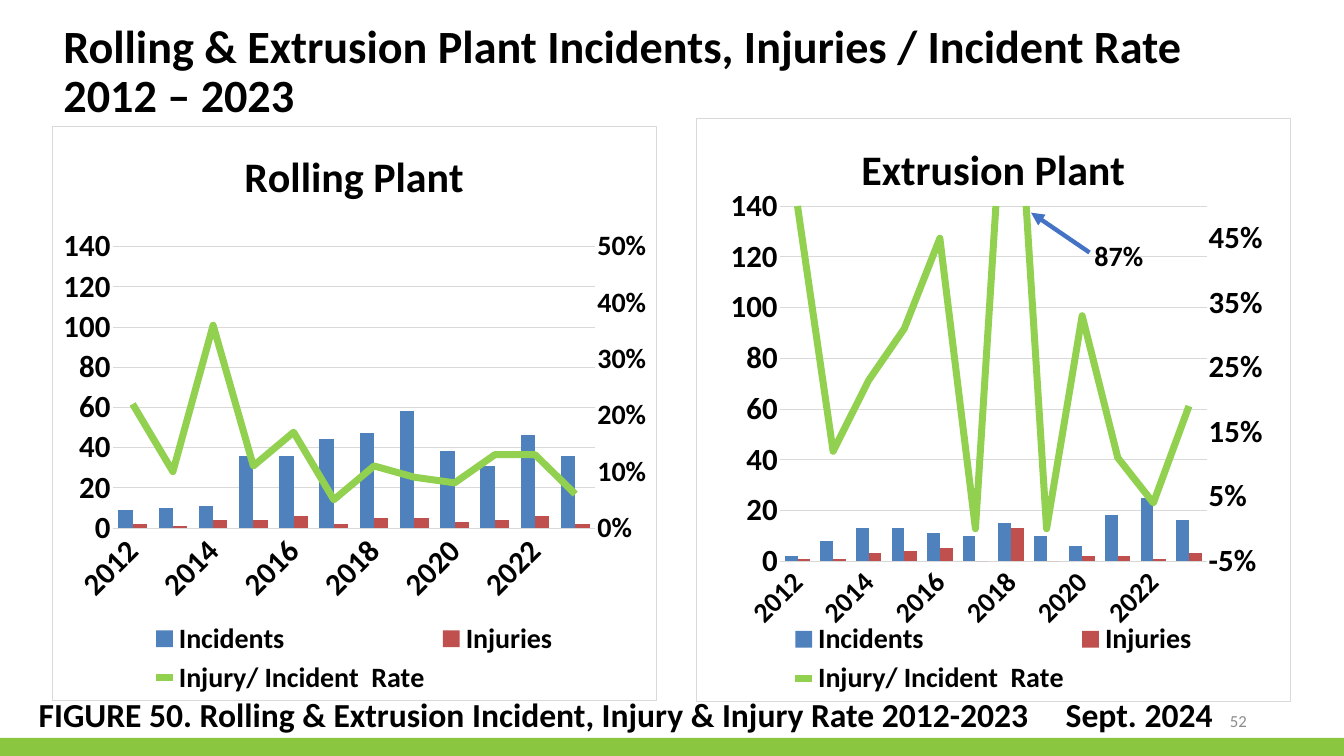
from copy import deepcopy
from lxml import etree
from pptx import Presentation
from pptx.chart.axis import ValueAxis
from pptx.chart.data import CategoryChartData
from pptx.dml.color import RGBColor
from pptx.enum import chart as ch, shapes, text
from pptx.oxml import parse_xml
from pptx.oxml.ns import nsdecls, qn
from pptx.util import Inches, Pt

BLACK = RGBColor(0, 0, 0)
GRAY = RGBColor(0x8C, 0x8C, 0x8C)
RULE = RGBColor(0xD9, 0xD9, 0xD9)
GREEN = RGBColor(0x8B, 0xC6, 0x41)
LIME = RGBColor(0x92, 0xD0, 0x50)
BLUE = RGBColor(0x4F, 0x81, 0xBD)
RED = RGBColor(0xC0, 0x50, 0x4D)
ARROW = RGBColor(0x44, 0x72, 0xC4)
FACE = "Calibri"
YEARS = [str(y) for y in range(2012, 2024)]
NAMES = ("Incidents", "Injuries", "Injury/ Incident  Rate")

ROLLING = (
    (9, 10, 11, 36, 36, 44, 47, 58, 38, 31, 46, 36),
    (2, 1, 4, 4, 6, 2, 5, 5, 3, 4, 6, 2),
    (.22, .1, .36, .11, .17, .05, .11, .09, .08, .13, .13, .06))
EXTRUSION = (
    (2, 8, 13, 13, 11, 10, 15, 10, 6, 18, 25, 16),
    (1, 1, 3, 4, 5, 0, 13, 0, 2, 2, 1, 3),
    (.5, .12, .23, .31, .45, 0, .87, 0, .33, .11, .04, .19))


def style(font, size, color=BLACK, bold=True):
    font.name, font.size, font.bold = FACE, Pt(size), bold
    font.color.rgb = color


def add_text(slide, box, lines, size, color=BLACK, bold=True, tab=None):
    frame = slide.shapes.add_textbox(*map(Inches, box)).text_frame
    frame.word_wrap = True
    frame.text = "\n".join(lines)
    for para in frame.paragraphs:
        if tab:
            tabs = etree.SubElement(para._p.get_or_add_pPr(), qn("a:tabLst"))
            etree.SubElement(tabs, qn("a:tab"), pos=str(Inches(tab)), algn="l")
        style(para.font, size, color, bold)
    return frame


def add_node(parent, tag, val):
    etree.SubElement(parent, qn(tag)).set("val", str(val))


def set_scale(axis, low, high, step):
    axis.minimum_scale, axis.maximum_scale, axis.major_unit = low, high, step


def add_rate(chart, low, step, size):
    """Move the third series to a line on a right-hand axis."""
    plot = chart._chartSpace.chart.plotArea
    bar, cat, val = (plot.find(qn(t)) for t in ("c:barChart", "c:catAx", "c:valAx"))
    ser = bar.findall(qn("c:ser"))[2]
    for node in ser.findall(qn("c:invertIfNegative")):
        ser.remove(node)
    line = etree.Element(qn("c:lineChart"))
    line = parse_xml(f'<c:lineChart {nsdecls("c")}/>')
    add_node(line, "c:grouping", "standard")
    add_node(line, "c:varyColors", 0)
    line.append(ser)
    add_node(line, "c:marker", 1)
    bar.addnext(line)

    right, hidden = deepcopy(val), deepcopy(cat)
    val.addnext(right)
    right.addnext(hidden)
    for axis, own, other in ((hidden, 5001, 5002), (right, 5002, 5001)):
        axis.find(qn("c:axId")).set("val", str(own))
        axis.find(qn("c:crossAx")).set("val", str(other))
        add_node(line, "c:axId", own)
    hidden.get_or_add_delete_().set("val", "1")
    right.find(qn("c:axPos")).set("val", "r")
    right.find(qn("c:crosses")).set("val", "max")

    axis = ValueAxis(right)
    axis.has_major_gridlines = False
    set_scale(axis, low, .5, step)
    axis.tick_labels.number_format = "0%"
    axis.tick_labels.number_format_is_linked = False
    style(axis.tick_labels.font, size)


def set_area(chart, area):
    """Fix the inner plot area and frame the whole chart."""
    parts = "".join(f'<c:{k} val="{v}"/>' for k, v in zip("xywh", area))
    plot = chart._chartSpace.chart.plotArea
    for old in plot.findall(qn("c:layout")):
        plot.remove(old)
    plot.insert(0, parse_xml(
        f'<c:layout {nsdecls("c")}><c:manualLayout><c:layoutTarget val="inner"/>'
        f'<c:xMode val="edge"/><c:yMode val="edge"/>{parts}'
        '</c:manualLayout></c:layout>'))
    chart._chartSpace.chart.addnext(parse_xml(
        f'<c:spPr {nsdecls("c", "a")}><a:solidFill><a:srgbClr val="FFFFFF"/></a:solidFill>'
        f'<a:ln w="{Pt(.75)}"><a:solidFill><a:srgbClr val="{RULE}"/></a:solidFill></a:ln></c:spPr>'))


def add_plant(slide, box, title, rows, area, low, step, sizes):
    data = CategoryChartData()
    data.categories = YEARS
    for name, row in zip(NAMES, rows):
        data.add_series(name, row, "0%" if name == NAMES[2] else "General")
    chart = slide.shapes.add_chart(
        ch.XL_CHART_TYPE.COLUMN_CLUSTERED, *map(Inches, box), data).chart
    years, right = sizes
    style(chart.font, 40)

    # Title and legend
    chart.has_title = True
    chart.chart_title.text_frame.text = title
    style(chart.chart_title.text_frame.paragraphs[0].font, 60)
    chart.chart_title.include_in_layout = False
    chart.has_legend = True
    chart.legend.position = ch.XL_LEGEND_POSITION.BOTTOM
    chart.legend.include_in_layout = False
    style(chart.legend.font, 40)

    # Axes
    cat, val = chart.category_axis, chart.value_axis
    for axis, size in ((cat, years), (val, 44)):
        axis.major_tick_mark = axis.minor_tick_mark = ch.XL_TICK_MARK.NONE
        style(axis.tick_labels.font, size)
    cat.tick_label_position = ch.XL_TICK_LABEL_POSITION.LOW
    cat._element.find(qn("c:txPr")).find(qn("a:bodyPr")).set("rot", "-2700000")
    val.has_major_gridlines = True
    for rule in (cat.format.line, val.major_gridlines.format.line):
        rule.color.rgb, rule.width = RULE, Pt(.75)
    val.format.line.fill.background()
    set_scale(val, 0, 140, 20)

    # Series
    plot = chart.plots[0]
    plot.gap_width, plot.overlap, plot.vary_by_categories = 80, 0, False
    for ser, color in zip(plot.series, (BLUE, RED)):
        ser.format.fill.solid()
        ser.format.fill.fore_color.rgb = color
    add_rate(chart, low, step, right)
    rate = chart.plots[1].series[0]
    rate.smooth = False
    rate.marker.style = ch.XL_MARKER_STYLE.NONE
    rate.format.line.color.rgb, rate.format.line.width = LIME, Pt(10)
    set_area(chart, area)


def add_arrow(slide, start, end):
    line = slide.shapes.add_connector(
        shapes.MSO_CONNECTOR.STRAIGHT, *map(Inches, start + end))
    line.line.color.rgb, line.line.width = ARROW, Pt(6.25)
    etree.SubElement(line.line._get_or_add_ln(), qn("a:tailEnd"), type="triangle")
    etree.SubElement(line._element.spPr, qn("a:effectLst"))


def main():
    deck = Presentation()
    deck.slide_width, deck.slide_height = Inches(26.67), Inches(15)
    slide = deck.slides.add_slide(deck.slide_layouts[6])

    # Footer band and page number
    band = slide.shapes.add_shape(shapes.MSO_SHAPE.RECTANGLE, *map(Inches, (0, 14.64, 26.67, .36)))
    band.shadow.inherit = False
    band.fill.solid()
    band.fill.fore_color.rgb = GREEN
    band.line.fill.background()
    page = add_text(slide, (18.84, 13.9, 6, .8), ["52"], 24, GRAY, False)
    page.vertical_anchor = text.MSO_ANCHOR.MIDDLE
    page.paragraphs[0].alignment = text.PP_ALIGN.RIGHT

    # Heading and caption
    head = add_text(slide, (1.16, .41, 24.44, 1.38), [
        "Rolling & Extrusion Plant Incidents, Injuries / Incident Rate", "2012 – 2023"], 66)
    for para in head.paragraphs:
        para.line_spacing = .9
    add_text(slide, (.67, 13.72, 24.44, .91), [
        "FIGURE 50. Rolling & Extrusion Incident, Injury & Injury Rate 2012-2023\tSept. 2024"],
        48, tab=20.38)

    # Charts
    add_plant(slide, (1.03, 2.49, 11.99, 11.41), "Rolling Plant", ROLLING,
              (.1, .21, .8, .49), 0, .1, (44, 40))
    add_plant(slide, (13.82, 2.35, 11.78, 11.56), "Extrusion Plant", EXTRUSION,
              (.14, .15, .72, .61), -.05, .05, (40, 44))

    # Note on the clipped peak
    add_text(slide, (21.62, 4.68, 1.54, .77), ["87%"], 40)
    add_arrow(slide, (21.62, 5.01), (20.46, 4.22))
    deck.save("out.pptx")


if __name__ == "__main__":
    main()
